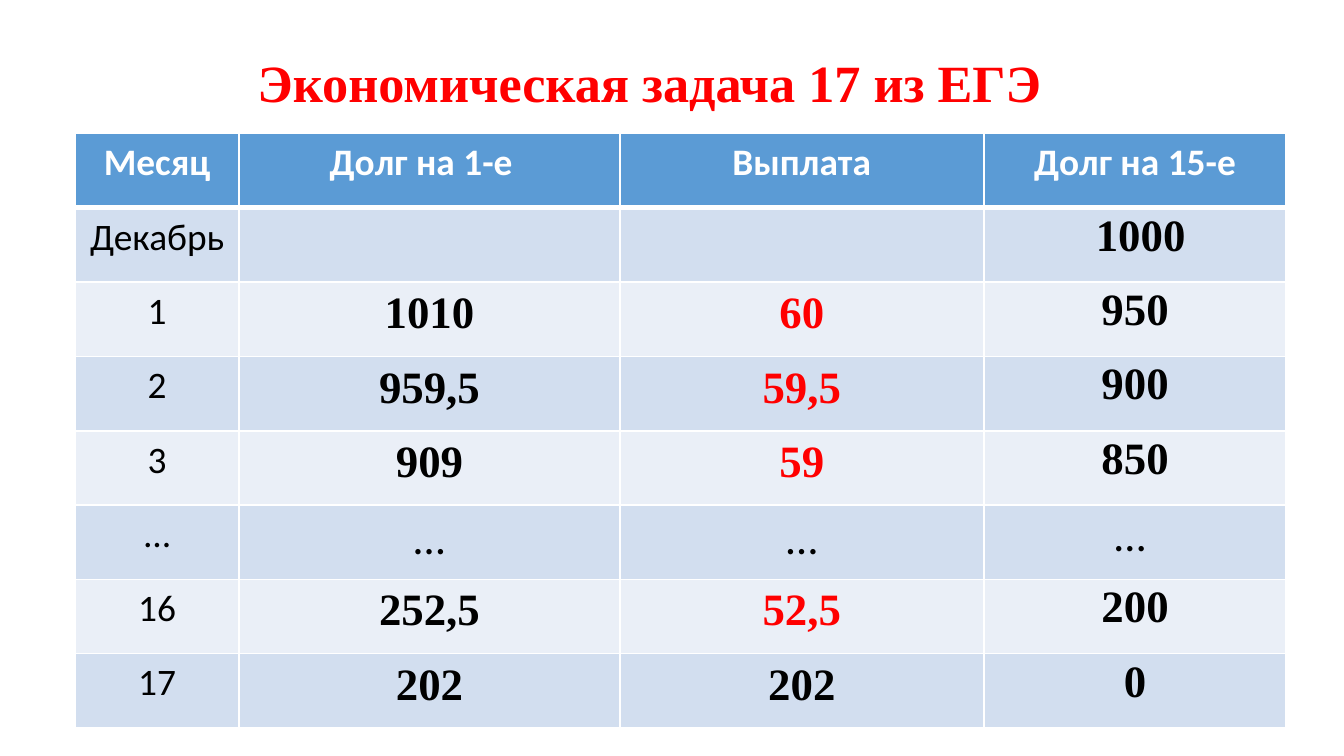
from lxml.etree import SubElement
from pptx import Presentation
from pptx.dml.color import RGBColor
from pptx.enum.text import MSO_ANCHOR as Anchor, PP_ALIGN as Align
from pptx.oxml.ns import qn
from pptx.util import Pt

COLORS = {
    "red": "FF0000", "black": "000000", "white": "FFFFFF",
    "header": "5B9BD5", "odd": "D2DEEF", "even": "EAEFF7",
}
SERIF, SANS = "Times New Roman", "Calibri"


def write(frame, text, size=20, font=SANS, color="black", bold=False, spacing=None):
    paragraph = frame.paragraphs[0]
    paragraph.alignment = Align.CENTER
    paragraph.line_spacing = spacing
    run = paragraph.add_run()
    run.text = text
    run.font.size = Pt(size)
    run.font.name = font
    run.font.bold = bold
    run.font.color.rgb = RGBColor.from_string(COLORS[color])


def paint_cell(cell, fill, bottom):
    # Borders must precede the fill in the cell properties
    properties = cell._tc.get_or_add_tcPr()
    for side, width in (("L", 1), ("R", 1), ("T", 1), ("B", bottom)):
        line = SubElement(properties, qn(f"a:ln{side}"), w=str(Pt(width)))
        solid = SubElement(line, qn("a:solidFill"))
        SubElement(solid, qn("a:srgbClr"), val=COLORS["white"])
    cell.fill.solid()
    cell.fill.fore_color.rgb = RGBColor.from_string(COLORS[fill])


presentation = Presentation()
presentation.slide_width, presentation.slide_height = Pt(720), Pt(405)
slide = presentation.slides.add_slide(presentation.slide_layouts[6])

# Title
title = slide.shapes.add_textbox(Pt(40.3), Pt(15), Pt(615), Pt(62.6)).text_frame
title.word_wrap = True
title.vertical_anchor = Anchor.MIDDLE
write(title, "Экономическая задача 17 из ЕГЭ", size=28, font=SERIF,
      color="red", bold=True, spacing=Pt(28))

# Debt schedule
schedule = [
    ("Месяц", "Долг на 1-е", "Выплата", "Долг на 15-е"),
    ("Декабрь", "", "", " 1000"),
    ("1", "1010", "60", "950"),
    ("2", "959,5", "59,5", "900"),
    ("3", "909", "59", "850"),
    ("…", "…", "…", "… "),
    ("16", "252,5", "52,5", "200"),
    ("17", "202", "202", "0"),
]
widths = (87.8, 203.9, 195.1, 162)
row_height = 39.8
table = slide.shapes.add_table(
    len(schedule), len(widths), Pt(40.3), Pt(71.6),
    Pt(sum(widths)), Pt(row_height * len(schedule))).table
for column, width in zip(table.columns, widths):
    column.width = Pt(width)

MONTH, OPENING, PAYMENT, CLOSING = range(4)
last = len(schedule) - 1
for r, entries in enumerate(schedule):
    table.rows[r].height = Pt(row_height)
    fill = "header" if r == 0 else "odd" if r % 2 else "even"
    for c, text in enumerate(entries):
        cell = table.cell(r, c)
        paint_cell(cell, fill, bottom=3 if r == 0 else 1)
        if r and c == CLOSING:
            cell.margin_left = cell.margin_right = Pt(5)
            cell.margin_top = cell.margin_bottom = 0
        if not text:
            continue
        if r == 0:
            write(cell.text_frame, text, color="white", bold=True)
        elif c == MONTH:
            write(cell.text_frame, text)
        else:
            dots = text.startswith("…")
            red = c == PAYMENT and r != last and not dots
            write(cell.text_frame, text, size=24, font=SANS if dots else SERIF,
                  color="red" if red else "black", bold=not dots,
                  spacing=1.07 if c == CLOSING else None)

# The opening debt heading sits slightly left of centre
table.cell(0, OPENING).margin_right = Pt(16)

presentation.save("out.pptx")
